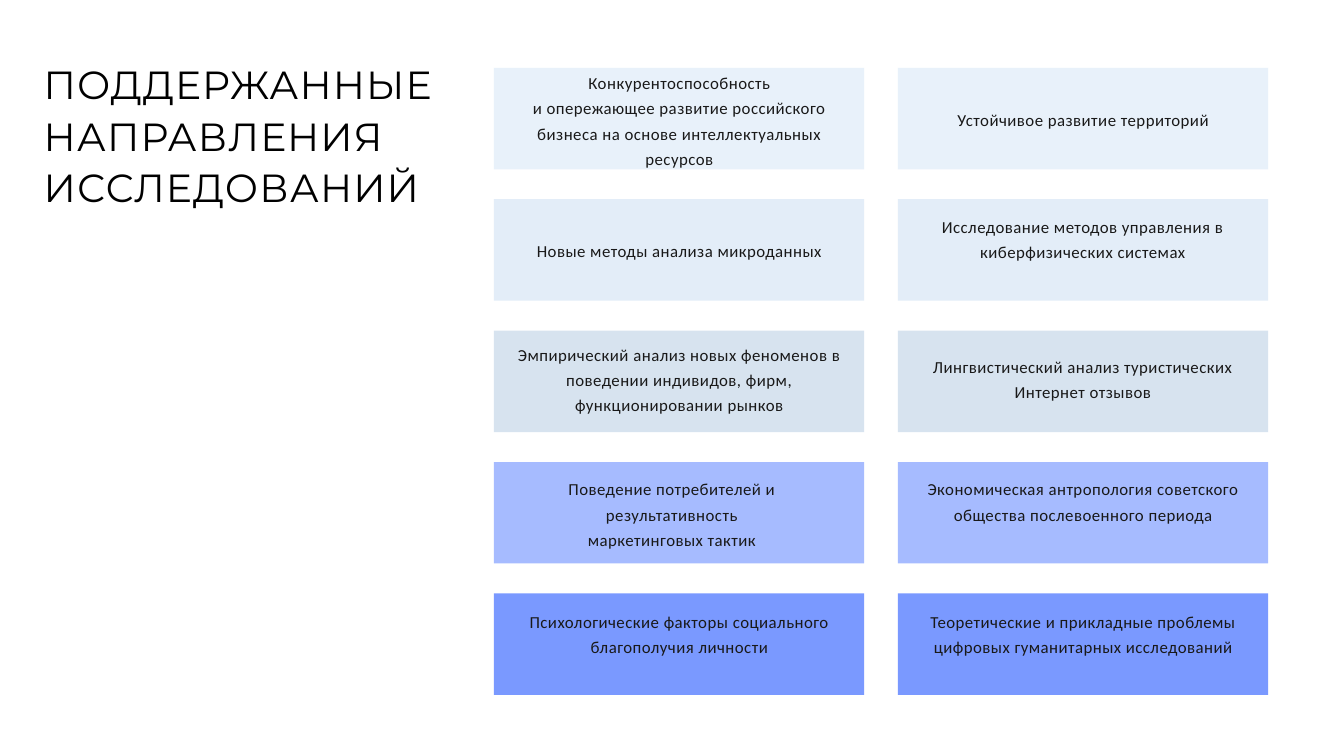
from lxml import etree
from pptx import Presentation
from pptx.dml.color import RGBColor
from pptx.enum.shapes import MSO_SHAPE
from pptx.enum.text import MSO_ANCHOR, MSO_AUTO_SIZE, PP_ALIGN
from pptx.oxml.ns import qn
from pptx.util import Inches, Pt

RECTANGLE = MSO_SHAPE.RECTANGLE
LEFT, CENTER = PP_ALIGN.LEFT, PP_ALIGN.CENTER
TOP = MSO_ANCHOR.TOP
GROW = MSO_AUTO_SIZE.SHAPE_TO_FIT_TEXT

BLACK = RGBColor(0x00, 0x00, 0x00)
INK = RGBColor(0x19, 0x19, 0x19)
PALE = RGBColor(0xC7, 0xDC, 0xF4)
SKY = RGBColor(0xB9, 0xD2, 0xEF)
STEEL = RGBColor(0x9D, 0xB9, 0xD9)
BLUE = RGBColor(0x22, 0x55, 0xFF)

SLIDE_WIDTH, SLIDE_HEIGHT = 20, 11.25
TITLE_BOX = (0.65, 0.84, 7.57, 2.27)
GRID_BOX = (7.35, 1.01, 11.52, 9.33)
CARD_WIDTH, CARD_HEIGHT = 5.51, 1.51
LINE_HEIGHT = 0.36

# Fill colour and opacity in percent, one pair for each row
ROW_FILLS = [(PALE, 40), (SKY, 40), (STEEL, 40), (BLUE, 40), (BLUE, 60)]

# Columns of cards: text, then left, top and width inside the card, and lines
COLUMNS = [
    [
        ("Конкурентоспособность\nи опережающее развитие российского бизнеса "
         "на основе интеллектуальных ресурсов", 0.39, 0, 4.74, 4),
        ("Новые методы анализа микроданных", 0.14, 0.54, 5.24, 1),
        ("Эмпирический анализ новых феноменов в поведении индивидов, фирм, "
         "функционировании рынков", 0.14, 0.13, 5.24, 3),
        ("Поведение потребителей и результативность маркетинговых тактик",
         0.87, 0.18, 3.56, 3),
        ("Психологические факторы социального благополучия личности",
         0.47, 0.2, 4.58, 3),
    ],
    [
        ("Устойчивое развитие территорий", 0.14, 0.55, 5.24, 1),
        ("Исследование методов управления в киберфизических системах",
         0.52, 0.18, 4.47, 3),
        ("Лингвистический анализ туристических Интернет отзывов",
         0.3, 0.31, 4.91, 2),
        ("Экономическая антропология советского общества послевоенного периода",
         0.33, 0.18, 4.86, 3),
        ("Теоретические и прикладные проблемы цифровых гуманитарных исследований",
         0.44, 0.2, 4.64, 3),
    ],
]


def add_text(slide, box, text, *, size=18, font="Calibri", color=INK,
             align=CENTER, line_points=27, spacing=0.5):
    """Add a text box; each line of the text becomes a paragraph."""
    frame = slide.shapes.add_textbox(*map(Inches, box)).text_frame
    frame.word_wrap = True
    frame.auto_size = GROW
    frame.vertical_anchor = TOP
    frame.margin_left = frame.margin_right = 0
    frame.margin_top = frame.margin_bottom = 0
    frame.text = text
    for paragraph in frame.paragraphs:
        paragraph.alignment = align
        paragraph.line_spacing = Pt(line_points)
        run_font = paragraph.runs[0].font
        run_font.size = Pt(size)
        run_font.name = font
        run_font.color.rgb = color
        # Letter spacing is stored in hundredths of a point
        paragraph.runs[0]._r.get_or_add_rPr().set("spc", str(round(spacing * 100)))


def add_panel(slide, box, color, opacity):
    """Add a translucent rectangle without an outline."""
    shape = slide.shapes.add_shape(RECTANGLE, *map(Inches, box))
    shape.shadow.inherit = False
    shape.line.fill.background()
    shape.fill.solid()
    shape.fill.fore_color.rgb = color
    color_element = shape._element.spPr.find(qn("a:solidFill")).find(qn("a:srgbClr"))
    etree.SubElement(color_element, qn("a:alpha")).set("val", str(opacity * 1000))


def add_title(slide, box):
    add_text(slide, box, "ПОДДЕРЖАННЫЕ НАПРАВЛЕНИЯ ИССЛЕДОВАНИЙ", size=42,
             font="Montserrat", color=BLACK, align=LEFT, line_points=55, spacing=1.2)


def add_card_grid(slide, box):
    """Spread the columns and rows of cards evenly over the box."""
    left, top, width, height = box
    column_step = (width - CARD_WIDTH) / (len(COLUMNS) - 1)
    row_step = (height - CARD_HEIGHT) / (len(ROW_FILLS) - 1)
    for column, cards in enumerate(COLUMNS):
        for row, (card, fill) in enumerate(zip(cards, ROW_FILLS)):
            text, text_left, text_top, text_width, lines = card
            x, y = left + column * column_step, top + row * row_step
            add_panel(slide, (x, y, CARD_WIDTH, CARD_HEIGHT), *fill)
            add_text(slide, (x + text_left, y + text_top, text_width,
                             lines * LINE_HEIGHT), text)


def main():
    presentation = Presentation()
    presentation.slide_width = Inches(SLIDE_WIDTH)
    presentation.slide_height = Inches(SLIDE_HEIGHT)
    slide = presentation.slides.add_slide(presentation.slide_layouts[6])
    add_card_grid(slide, GRID_BOX)
    add_title(slide, TITLE_BOX)
    presentation.save("out.pptx")


if __name__ == "__main__":
    main()
